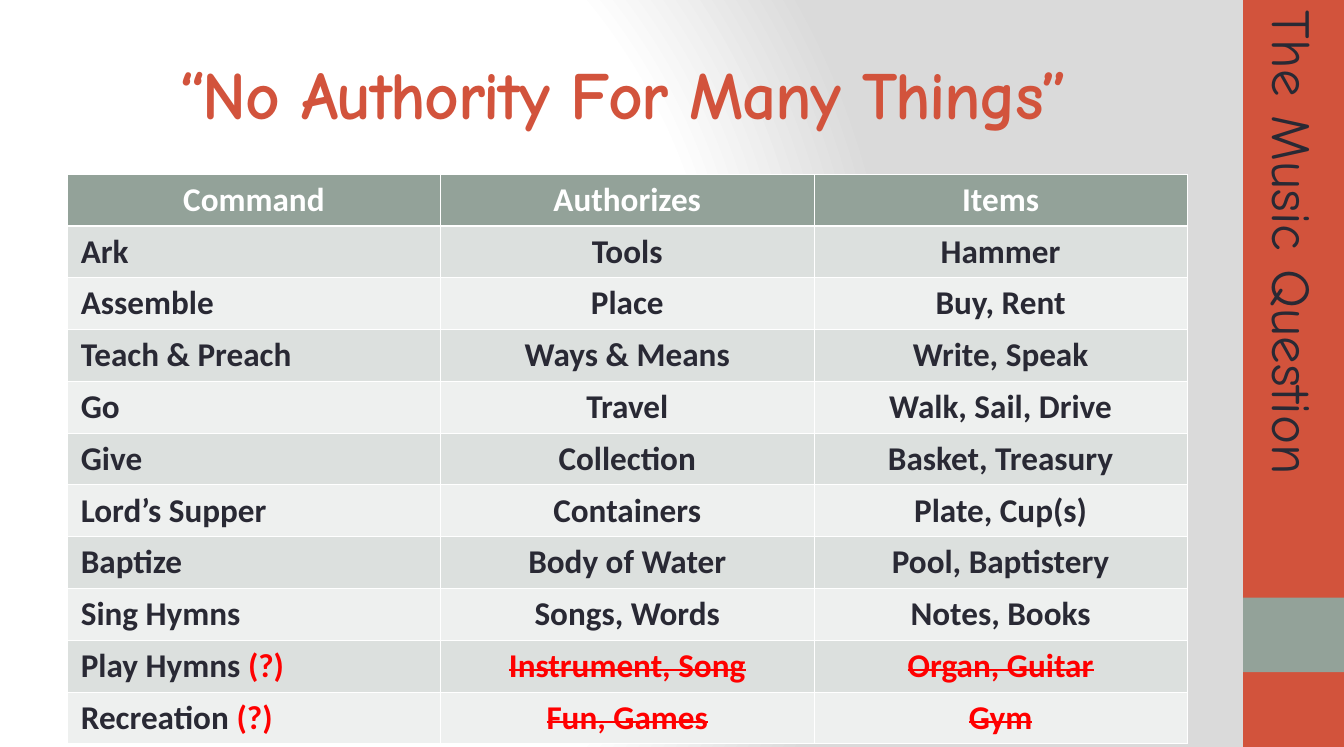
from dataclasses import dataclass

from lxml import etree
from pptx import Presentation
from pptx.dml.color import RGBColor
from pptx.enum.shapes import MSO_SHAPE
from pptx.enum.text import MSO_ANCHOR, MSO_AUTO_SIZE, PP_ALIGN
from pptx.oxml import parse_xml
from pptx.oxml.ns import qn
from pptx.slide import Slide
from pptx.table import _Cell
from pptx.text.text import TextFrame, _Run
from pptx.util import Cm, Pt

RECT = MSO_SHAPE.RECTANGLE
MIDDLE = MSO_ANCHOR.MIDDLE
TOP = MSO_ANCHOR.TOP
GROW = MSO_AUTO_SIZE.SHAPE_TO_FIT_TEXT
FIXED = MSO_AUTO_SIZE.NONE
LEFT = PP_ALIGN.LEFT
CENTER = PP_ALIGN.CENTER
NAMESPACE = "http://schemas.openxmlformats.org/drawingml/2006/main"


@dataclass(frozen=True)
class Theme:
    accent: str = "D2533C"
    sage: str = "93A299"
    ink: str = "292934"
    white: str = "FFFFFF"
    gray: str = "DADADA"
    red: str = "FF0000"
    bands: tuple[str, str] = ("DCE0DE", "EEF0EF")
    display_font: str = "Comic Neue"
    table_font: str = "Calibri"
    title_size: float = 65
    side_size: float = 53
    table_size: float = 32


@dataclass(frozen=True)
class Box:
    left: float
    top: float
    width: float
    height: float

    def lengths(self) -> tuple[Cm, Cm, Cm, Cm]:
        return Cm(self.left), Cm(self.top), Cm(self.width), Cm(self.height)


@dataclass(frozen=True)
class Panel:
    box: Box
    color: str


@dataclass(frozen=True)
class Label:
    text: str
    box: Box
    size: float
    color: str
    align: PP_ALIGN = LEFT
    anchor: MSO_ANCHOR = TOP
    fit: MSO_AUTO_SIZE = FIXED
    bold: bool = False
    spacing: int = 0
    rotation: float = 0


@dataclass(frozen=True)
class Row:
    command: str
    authorizes: str
    items: str
    doubtful: bool = False


THEME = Theme()
PANELS = [
    Panel(Box(42.29, 0, 3.43, 25.4), THEME.accent),
    Panel(Box(42.29, 20.32, 3.43, 2.54), THEME.sage),
]
TITLE = Label("“No Authority For Many Things”", Box(0, 1.02, 42.42, 4.24), THEME.title_size,
              THEME.accent, CENTER, MIDDLE, bold=True, spacing=-150)
SIDE = Label("The Music Question", Box(33.88, 8.84, 20.32, 2.64), THEME.side_size,
             THEME.ink, fit=GROW, rotation=90)
TABLE_BOX = Box(2.29, 5.92, 38.1, 18.72)
HEADER = Row("Command", "Authorizes", "Items")
ROWS = [
    Row("Ark", "Tools", "Hammer"),
    Row("Assemble", "Place", "Buy, Rent"),
    Row("Teach & Preach", "Ways & Means", "Write, Speak"),
    Row("Go", "Travel", "Walk, Sail, Drive"),
    Row("Give", "Collection", "Basket, Treasury"),
    Row("Lord’s Supper", "Containers", "Plate, Cup(s)"),
    Row("Baptize", "Body of Water", "Pool, Baptistery"),
    Row("Sing Hymns", "Songs, Words", "Notes, Books"),
    Row("Play Hymns ", "Instrument, Song", "Organ, Guitar", True),
    Row("Recreation ", "Fun, Games", "Gym", True),
]


def set_background(s: Slide) -> None:
    fill = s.background.fill
    fill.solid()
    solid = s._element.find(".//" + qn("a:solidFill"))
    stops = "".join(
        f'<a:gs pos="{position * 1000}"><a:srgbClr val="{color}"/></a:gs>'
        for position, color in ((0, THEME.white), (75, THEME.white), (100, THEME.gray))
    )
    gradient = parse_xml(
        f'<a:gradFill xmlns:a="{NAMESPACE}" rotWithShape="1"><a:gsLst>{stops}</a:gsLst>'
        '<a:path path="circle"><a:fillToRect l="20000" t="50000" r="100000" b="50000"/>'
        "</a:path></a:gradFill>"
    )
    solid.getparent().replace(solid, gradient)


def format_run(r: _Run, font: str, size: float, color: str, bold: bool) -> None:
    r.font.name = font
    r.font.size = Pt(size)
    r.font.bold = bold
    r.font.color.rgb = RGBColor.from_string(color)


def set_margins(target: TextFrame | _Cell, side: float) -> None:
    target.margin_left = target.margin_right = Cm(side)
    target.margin_top = target.margin_bottom = Cm(0.19)


def add_panel(s: Slide, panel: Panel) -> None:
    sp = s.shapes.add_shape(RECT, *panel.box.lengths())
    sp.shadow.inherit = False
    sp.fill.solid()
    sp.fill.fore_color.rgb = RGBColor.from_string(panel.color)
    sp.line.fill.background()


def add_label(s: Slide, label: Label) -> None:
    sp = s.shapes.add_textbox(*label.box.lengths())
    sp.rotation = label.rotation
    tf = sp.text_frame
    tf.word_wrap = True
    tf.auto_size = label.fit
    tf.vertical_anchor = label.anchor
    set_margins(tf, 0.37)
    tf.text = label.text
    p = tf.paragraphs[0]
    p.alignment = label.align
    r = p.runs[0]
    format_run(r, THEME.display_font, label.size, label.color, label.bold)
    if label.spacing:
        r._r.get_or_add_rPr().set("spc", str(label.spacing))


def set_borders(cell: _Cell, top: float, bottom: float) -> None:
    tc_pr = cell._tc.get_or_add_tcPr()
    for side, width in (("L", 1), ("R", 1), ("T", top), ("B", bottom)):
        line = etree.SubElement(tc_pr, qn(f"a:ln{side}"), w=str(Pt(width)))
        fill = etree.SubElement(line, qn("a:solidFill"))
        etree.SubElement(fill, qn("a:srgbClr"), val=THEME.white)


def fill_row(cells: list[_Cell], row: Row, index: int) -> None:
    is_header = index == 0
    background = THEME.sage if is_header else THEME.bands[(index - 1) % 2]
    for column, (cell, text) in enumerate(zip(cells, (row.command, row.authorizes, row.items))):
        struck = row.doubtful and column > 0
        color = THEME.white if is_header else THEME.red if struck else THEME.ink
        set_margins(cell, 0.46)
        set_borders(cell, 3 if index == 1 else 1, 3 if is_header else 1)
        cell.fill.solid()
        cell.fill.fore_color.rgb = RGBColor.from_string(background)
        cell.text_frame.text = text
        p = cell.text_frame.paragraphs[0]
        p.alignment = CENTER if is_header or column > 0 else LEFT
        r = p.runs[0]
        format_run(r, THEME.table_font, THEME.table_size, color, True)
        if struck:
            r._r.get_or_add_rPr().set("strike", "sngStrike")
        elif row.doubtful:
            mark = p.add_run()
            mark.text = "(?)"
            format_run(mark, THEME.table_font, THEME.table_size, THEME.red, True)


def add_commands_table(s: Slide) -> None:
    rows = [HEADER, *ROWS]
    table = s.shapes.add_table(len(rows), 3, *TABLE_BOX.lengths()).table
    for index, (table_row, row) in enumerate(zip(table.rows, rows)):
        fill_row(list(table_row.cells), row, index)


def main() -> None:
    prs = Presentation()
    prs.slide_width, prs.slide_height = Cm(45.72), Cm(25.4)
    s = prs.slides.add_slide(prs.slide_layouts[6])
    set_background(s)
    for panel in PANELS:
        add_panel(s, panel)
    add_label(s, TITLE)
    add_commands_table(s)
    add_label(s, SIDE)
    prs.save("out.pptx")


if __name__ == "__main__":
    main()
